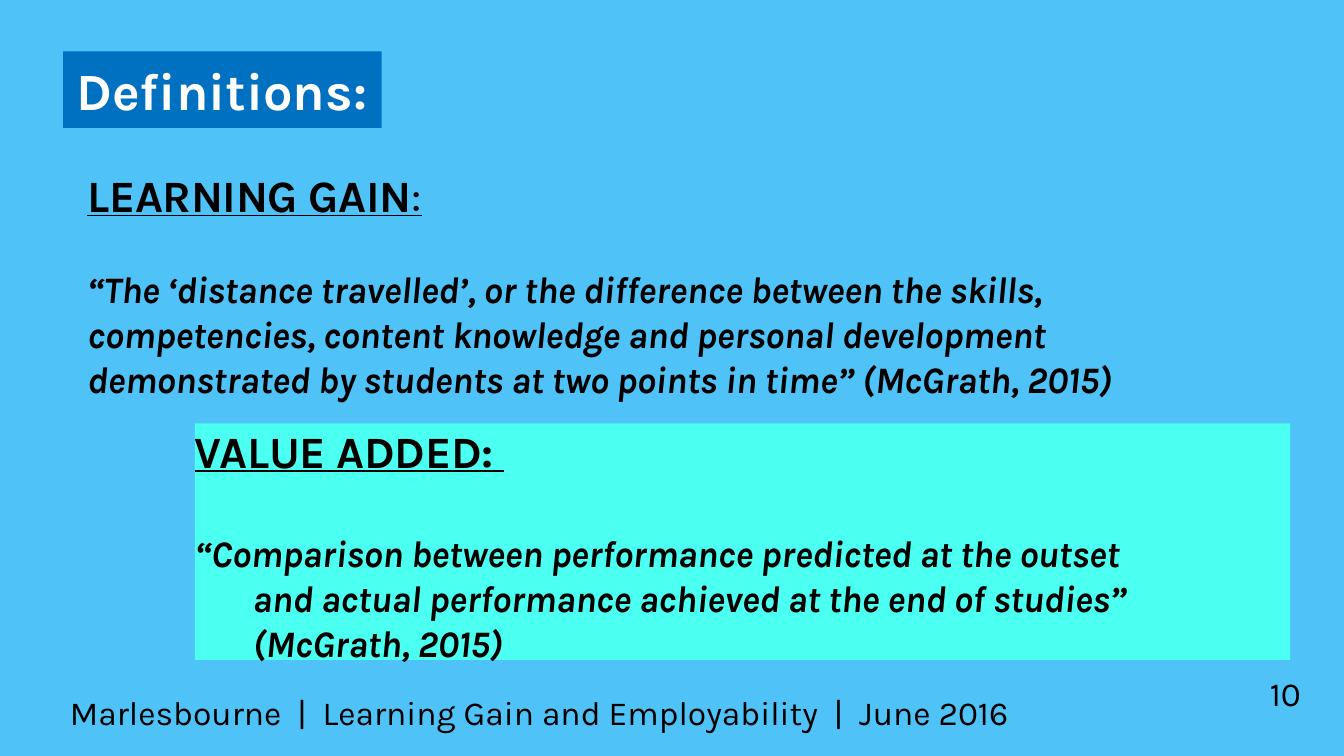
from dataclasses import dataclass

from pptx import Presentation
from pptx.dml.color import RGBColor
from pptx.enum.shapes import MSO_SHAPE
from pptx.enum.text import MSO_ANCHOR, MSO_AUTO_SIZE, PP_ALIGN
from pptx.util import Inches, Pt


@dataclass(frozen=True)
class Theme:
    """Colours, font and type sizes of the deck."""

    background: str = "4FC3F7"
    label: str = "0070C0"
    panel: str = "4BFFF1"
    ink: str = "000000"
    white: str = "FFFFFF"
    font: str = "Karla"
    title: int = 28
    heading: int = 24
    quote: int = 20
    footer: int = 18
    tracking: int = -20


THEME = Theme()
WIDTH = Inches(10)
HEIGHT = WIDTH * 9 // 16


def place(left, top, width, height):
    """Turn percentages of the slide's size into lengths."""
    return (int(WIDTH * left / 100), int(HEIGHT * top / 100),
            int(WIDTH * width / 100), int(HEIGHT * height / 100))


def set_frame(box, anchor=MSO_ANCHOR.TOP):
    """Give a box wrapped text without margins and return its frame."""
    frame = box.text_frame
    frame.word_wrap = True
    frame.vertical_anchor = anchor
    frame.margin_left = frame.margin_right = 0
    frame.margin_top = frame.margin_bottom = 0
    return frame


def add_span(para, text, size, color=THEME.ink, bold=False, italic=False,
             underline=False, tracking=0):
    """Add one styled run to a paragraph."""
    span = para.add_run()
    span.text = text
    font = span.font
    font.name, font.size = THEME.font, Pt(size)
    font.color.rgb = RGBColor.from_string(color)
    font.bold, font.italic, font.underline = bold, italic, underline
    if tracking:
        font._element.set("spc", str(tracking))


def add_panel(page, area, color):
    """Add a flat filled rectangle."""
    panel = page.shapes.add_shape(MSO_SHAPE.RECTANGLE, *place(*area))
    panel.shadow.inherit = False
    panel.fill.solid()
    panel.fill.fore_color.rgb = RGBColor.from_string(color)
    panel.line.fill.background()
    return panel


def add_title(page, area, text):
    """Add the title label, which fits its text."""
    frame = add_panel(page, area, THEME.label).text_frame
    frame.word_wrap = False
    frame.auto_size = MSO_AUTO_SIZE.SHAPE_TO_FIT_TEXT
    frame.vertical_anchor = MSO_ANCHOR.TOP
    para = frame.paragraphs[0]
    para.alignment = PP_ALIGN.LEFT
    add_span(para, text, THEME.title, THEME.white, bold=True)


def add_quote(frame, lines, gap=0, margin=0, indent=0):
    """Add one quoted paragraph, broken into the given lines."""
    quote = frame.add_paragraph()
    quote.alignment = PP_ALIGN.LEFT
    quote.space_before = Pt(gap)
    properties = quote._p.get_or_add_pPr()
    properties.set("marL", str(Inches(margin)))
    properties.set("indent", str(Inches(indent)))
    for index, line in enumerate(lines):
        if index:
            quote.add_line_break()
        add_span(quote, line, THEME.quote, bold=True, italic=True,
                 tracking=THEME.tracking)


def add_heading(box, term, colon=""):
    """Write an underlined term into a box and return its frame."""
    frame = set_frame(box)
    heading = frame.paragraphs[0]
    heading.alignment = PP_ALIGN.LEFT
    add_span(heading, term, THEME.heading, bold=True, underline=True,
             tracking=THEME.tracking)
    if colon:
        add_span(heading, colon, THEME.heading, underline=True,
                 tracking=THEME.tracking)
    return frame


def add_footer(page, area, text, alignment=PP_ALIGN.LEFT):
    """Add a line of footer text that sits on the bottom of its box."""
    box = page.shapes.add_textbox(*place(*area))
    para = set_frame(box, MSO_ANCHOR.BOTTOM).paragraphs[0]
    para.alignment = alignment
    add_span(para, text, THEME.footer)


def main():
    """Build the definitions slide and save it."""
    deck = Presentation()
    deck.slide_width, deck.slide_height = WIDTH, HEIGHT
    page = deck.slides.add_slide(deck.slide_layouts[6])
    page.background.fill.solid()
    page.background.fill.fore_color.rgb = RGBColor.from_string(THEME.background)

    learning_gain = page.shapes.add_textbox(*place(6.5, 22.22, 87.9, 29.69))
    frame = add_heading(learning_gain, "LEARNING GAIN", ":")
    add_quote(frame, [
        "“The ‘distance travelled’, or the difference between the skills, "
        "competencies, content knowledge and personal development "
        "demonstrated by students at two points in time” (McGrath, 2015)",
    ], gap=24)

    add_footer(page, (5.2, 89.33, 89.1, 7.47),
               "Marlesbourne  |  Learning Gain and Employability  |  June 2016")
    add_footer(page, (91.2, 91.73, 5.6, 2.67), "10", PP_ALIGN.RIGHT)
    add_title(page, (4.7, 6.8, 23.7, 10.13), "Definitions:")

    value_added = add_panel(page, (14.5, 56, 81.5, 31.29), THEME.panel)
    frame = add_heading(value_added, "VALUE ADDED: ")
    hanging = 0.43
    add_quote(frame, [
        "“Comparison between performance predicted at the outset",
        "and actual performance achieved at the end of studies”",
    ], gap=28.5, margin=hanging, indent=-hanging)
    add_quote(frame, ["(McGrath, 2015)"], margin=hanging)

    deck.save("out.pptx")


if __name__ == "__main__":
    main()
